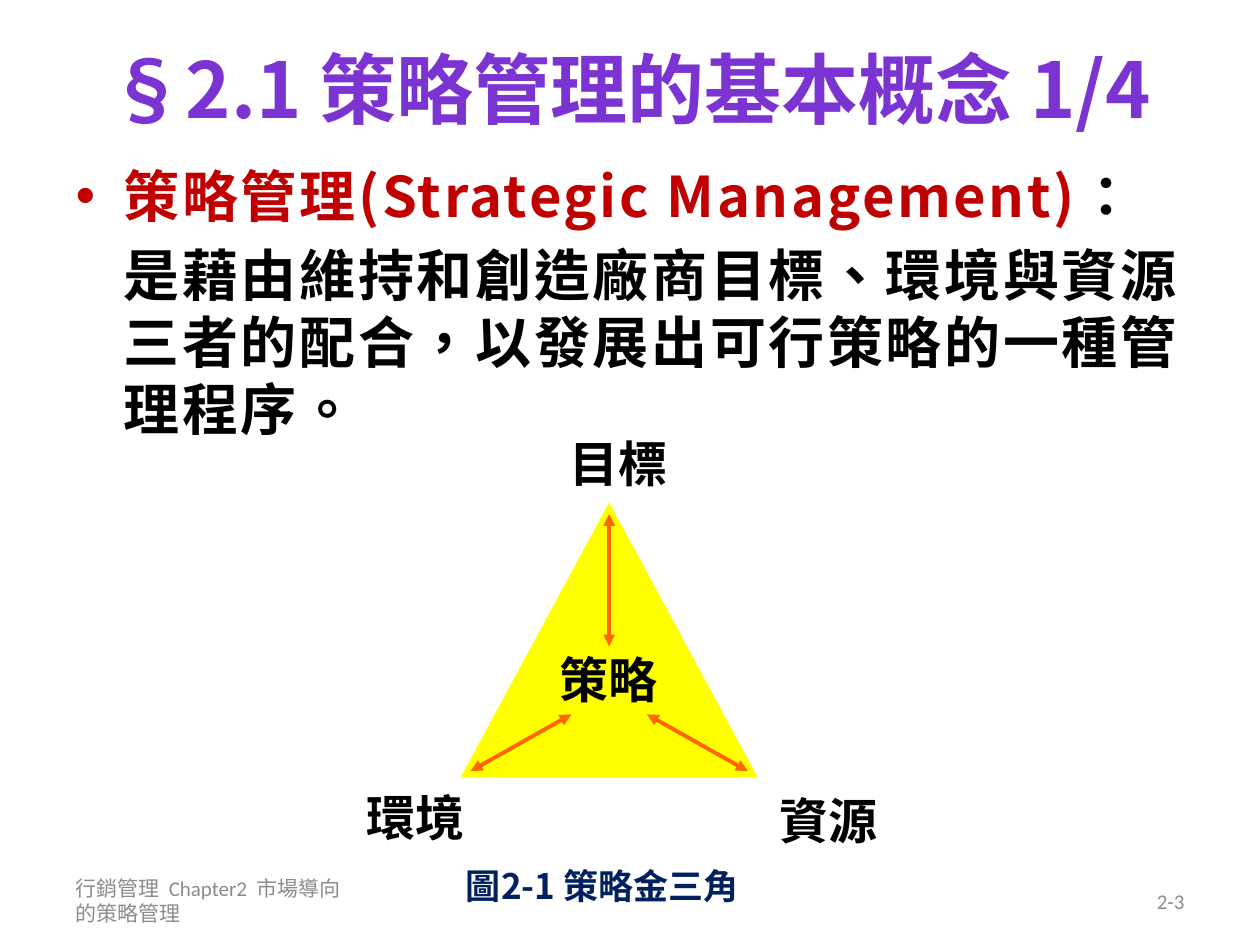
from lxml import etree
from pptx import Presentation
from pptx.dml.color import RGBColor
from pptx.enum.lang import MSO_LANGUAGE_ID as Lang
from pptx.enum.shapes import MSO_CONNECTOR as Connector, MSO_SHAPE as Shape
from pptx.enum.text import MSO_ANCHOR as Anchor, PP_ALIGN as Align
from pptx.oxml.ns import qn
from pptx.util import Inches, Pt

CJK = "Noto Sans CJK SC"
BLACK, GRAY, RED, NAVY = "000000", "8C8C8C", "C00000", "002060"
PURPLE, YELLOW, WHITE, ORANGE = "7B34D2", "FFFF00", "FFFFFF", "FF6600"


def rgb(value):
    return RGBColor.from_string(value)


def place(shape, left, top, width, height):
    shape.left, shape.top = Inches(left), Inches(top)
    shape.width, shape.height = Inches(width), Inches(height)


def style(paragraph, size, color=None, name=CJK, bold=True):
    font = paragraph.font
    font.name, font.size, font.bold = name, Pt(size), bold
    if color:
        font.color.rgb = rgb(color)
    east_asian = etree.SubElement(paragraph._p.pPr.find(qn("a:defRPr")), qn("a:ea"))
    east_asian.set("typeface", CJK)
    for run in paragraph.runs:
        run.font.language_id = Lang.TRADITIONAL_CHINESE


def add_label(slide, text, left, top, width, height, size, color,
              align=Align.LEFT, wrap=True, **font):
    box = slide.shapes.add_textbox(*map(Inches, (left, top, width, height)))
    frame = box.text_frame
    frame.word_wrap = wrap
    frame.vertical_anchor = Anchor.MIDDLE
    paragraph = frame.paragraphs[0]
    paragraph.text, paragraph.alignment = text, align
    style(paragraph, size, color, **font)


def add_title(slide, left, top, width, height):
    title = slide.shapes.title
    place(title, left, top, width, height)
    title.text_frame.text = "§2.1 策略管理的基本概念 1/4"
    title.text_frame.vertical_anchor = Anchor.MIDDLE
    heading = title.text_frame.paragraphs[0]
    heading.alignment = Align.CENTER
    style(heading, 44, PURPLE)


def add_definition(slide, left, top, width, height):
    body = slide.placeholders[1]
    place(body, left, top, width, height)
    term, meaning = body.text_frame.paragraphs[0], body.text_frame.add_paragraph()
    parts = (
        (term, "策略管理(Strategic Management)", RED),
        (term, "：", BLACK),
        (meaning, "是藉由維持和創造廠商目標、環境與資源三者的配合，"
                  "以發展出可行策略的一種管理程序。", BLACK),
    )
    for paragraph, text, color in parts:
        run = paragraph.add_run()
        run.text = text
        run.font.color.rgb = rgb(color)
        run._r.get_or_add_rPr().set("spc", "150")
    for paragraph, indent, bullet, before in (
            (term, -0.38, "•", 0), (meaning, 0, None, 6.4)):
        properties = paragraph._p.get_or_add_pPr()
        properties.set("marL", str(Inches(0.38)))
        properties.set("indent", str(Inches(indent)))
        paragraph.line_spacing, paragraph.space_before = Pt(38.5), Pt(before)
        if bullet:
            etree.SubElement(properties, qn("a:buFont")).set("typeface", "Arial")
            etree.SubElement(properties, qn("a:buChar")).set("char", bullet)
        else:
            etree.SubElement(properties, qn("a:buNone"))
        style(paragraph, 32)


def add_double_arrow(slide, start, end):
    arrow = slide.shapes.add_connector(
        Connector.STRAIGHT, *map(Inches, (*start, *end)))
    arrow.line.color.rgb, arrow.line.width = rgb(ORANGE), Pt(2.25)
    line = arrow.line._get_or_add_ln()
    for tag in ("a:headEnd", "a:tailEnd"):
        etree.SubElement(line, qn(tag)).set("type", "triangle")
    etree.SubElement(arrow._element.spPr, qn("a:effectLst"))


def add_strategy_triangle(slide, left, top, width, height):
    triangle = slide.shapes.add_shape(
        Shape.ISOSCELES_TRIANGLE, *map(Inches, (left, top, width, height)))
    triangle.shadow.inherit = False
    triangle.fill.solid()
    triangle.fill.fore_color.rgb = rgb(YELLOW)
    triangle.line.color.rgb, triangle.line.width = rgb(WHITE), Pt(3)

    for text, x, y in (("目標", 0.8, -0.55), ("環境", -0.81, 2.26),
                       ("資源", 2.47, 2.28), ("策略", 0.72, 1.16)):
        add_label(slide, text, left + x, top + y, 0.98, 0.57, 28, BLACK, wrap=False)

    center = left + width / 2
    add_double_arrow(slide, (center, top + 0.14), (center, top + 1.19))
    for side in (-1, 1):
        add_double_arrow(slide, (center + side * 0.3, top + 1.73),
                         (center + side * 1.1, top + 2.18))


def add_footer(slide, left, top, width, height):
    column = 2.33
    add_label(slide, "行銷管理  Chapter2  市場導向的策略管理", left, top, column, height,
              12, GRAY, name="Calibri", bold=False)
    add_label(slide, "2-3", left + width - column, top, column, height,
              12, GRAY, Align.RIGHT, name="Calibri", bold=False)


def main():
    deck = Presentation()
    deck.slide_width, deck.slide_height = Inches(10), Inches(7.5)
    slide = deck.slides.add_slide(deck.slide_layouts[1])
    add_title(slide, 0.5, 0, 9, 1.39)
    add_definition(slide, 0.5, 1.23, 9, 2.47)
    add_footer(slide, 0.5, 6.95, 9, 0.4)
    add_strategy_triangle(slide, 3.62, 3.94, 2.43, 2.25)
    add_label(slide, "圖2-1 策略金三角", 3.6, 6.81, 2.63, 0.44, 20, NAVY)
    deck.save("out.pptx")


if __name__ == "__main__":
    main()
